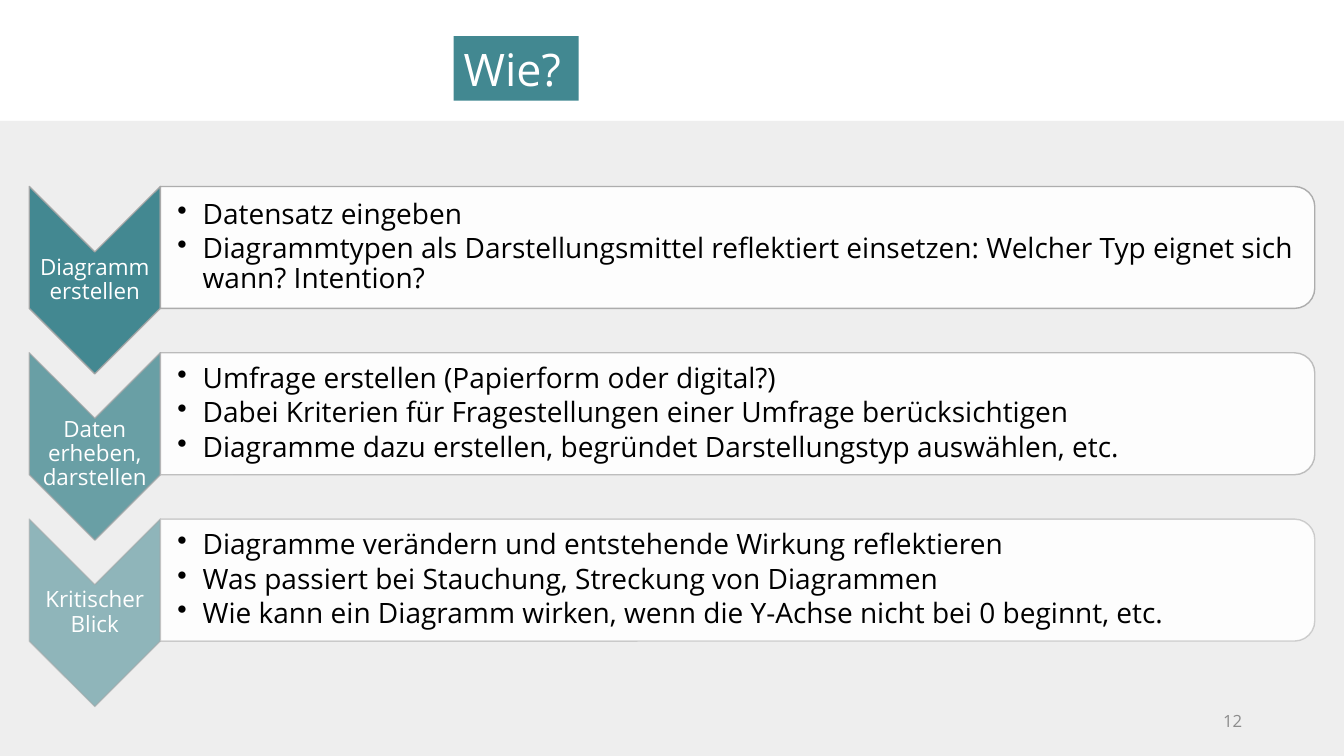
"""Builds the slide "Wie?" with three chevron steps and their bullet panels."""
import pptx
import pptx.util
import pptx.dml.color
import pptx.enum.shapes
import pptx.enum.text
import pptx.oxml.ns
import pptx.oxml.xmlchemy

Inches = pptx.util.Inches
Pt = pptx.util.Pt
Shape = pptx.enum.shapes.MSO_SHAPE
Align = pptx.enum.text.PP_ALIGN
Anchor = pptx.enum.text.MSO_ANCHOR
Element = pptx.oxml.xmlchemy.OxmlElement
qn = pptx.oxml.ns.qn
colors = {"band": "EEEEEE", "teal": "317E87", "title": "428891", "white": "FFFFFF",
          "edge": "A5A5A5", "text": "000000", "page": "8C8C8C"}


def draw(kind, left, top, width, height, fill, alpha=100, edge=0):
    shape = slide.shapes.add_shape(kind, Inches(left), Inches(top), Inches(width), Inches(height))
    shape.shadow.inherit = False
    shape.fill.solid()
    shape.fill.fore_color.rgb = pptx.dml.color.RGBColor.from_string(colors[fill])
    shape.line.fill.background()
    if edge:
        shape.rotation = 90
        shape.line.width = Pt(1)
        shape.line.color.rgb = pptx.dml.color.RGBColor.from_string(colors["edge"])
        for color, value in zip(shape.element.spPr.iter(qn("a:srgbClr")), (alpha, edge)):
            mark = Element("a:alpha")
            mark.set("val", str(value * 1000))
            color.append(mark)
    return shape


def write(shape, lines, size, color, align=Align.LEFT, inset=0.01, bullet=False, space=None):
    frame = shape.text_frame
    frame.word_wrap = True
    frame.vertical_anchor = Anchor.MIDDLE
    frame.margin_left = Inches(inset)
    frame.margin_right = frame.margin_top = frame.margin_bottom = Inches(0.01)
    for i, line in enumerate(lines):
        para = frame.paragraphs[0] if i == 0 else frame.add_paragraph()
        para.alignment = align
        if space:
            para.line_spacing = space
        if bullet:
            para.space_after = Pt(3)
            props = para._p.get_or_add_pPr()
            props.set("marL", str(Inches(0.25)))
            props.set("indent", str(-Inches(0.25)))
            dot = Element("a:buChar")
            dot.set("char", "•")
            props.append(dot)
        run = para.add_run()
        run.text = line
        run.font.name = "Open Sans"
        run.font.size = Pt(size)
        run.font.color.rgb = pptx.dml.color.RGBColor.from_string(colors[color])


deck = pptx.Presentation()
deck.slide_width, deck.slide_height = Inches(13.33), Inches(7.5)
slide = deck.slides.add_slide(deck.slide_layouts[6])

draw(Shape.RECTANGLE, 0, 1.2, 13.33, 6.3, "band")
page = slide.shapes.add_textbox(Inches(9.42), Inches(6.95), Inches(3), Inches(0.4))
write(page, ["12"], 12, "page", Align.RIGHT)
page.text_frame.margin_right = Inches(0.1)

steps = [
    ("Diagramm erstellen", 90, 0, [
        "Datensatz eingeben",
        "Diagrammtypen als Darstellungsmittel reflektiert einsetzen: "
        "Welcher Typ eignet sich wann? Intention?"]),
    ("Daten erheben, darstellen", 70, 0.08, [
        "Umfrage erstellen (Papierform oder digital?)",
        "Dabei Kriterien für Fragestellungen einer Umfrage berücksichtigen",
        "Diagramme dazu erstellen, begründet Darstellungstyp auswählen, etc."]),
    ("Kritischer Blick", 50, 0, [
        "Diagramme verändern und entstehende Wirkung reflektieren",
        "Was passiert bei Stauchung, Streckung von Diagrammen",
        "Wie kann ein Diagramm wirken, wenn die Y-Achse nicht bei 0 beginnt, etc."]),
]
for row, (name, alpha, shift, points) in enumerate(steps):
    drop = row * 1.65
    draw(Shape.CHEVRON, 0.01, 2.13 + drop, 1.86, 1.3, "teal", alpha, alpha)
    label = slide.shapes.add_textbox(
        Inches(0.29), Inches(2.5 + drop + shift), Inches(1.3), Inches(0.56))
    write(label, [name], 16, "white", Align.CENTER, space=0.9)
    draw(Shape.ROUND_2_SAME_RECTANGLE, 6.71, -3.27 + drop, 1.21, 11.45, "white", 90, alpha)
    panel = slide.shapes.add_textbox(
        Inches(1.6), Inches(1.91 + drop), Inches(11.39), Inches(1.09))
    write(panel, points, 20, "text", inset=0.16, bullet=True, space=0.9)

title = draw(Shape.RECTANGLE, 4.5, 0.36, 1.24, 0.64, "title")
write(title, ["Wie?"], 32, "white", inset=0.1)

deck.save("out.pptx")
